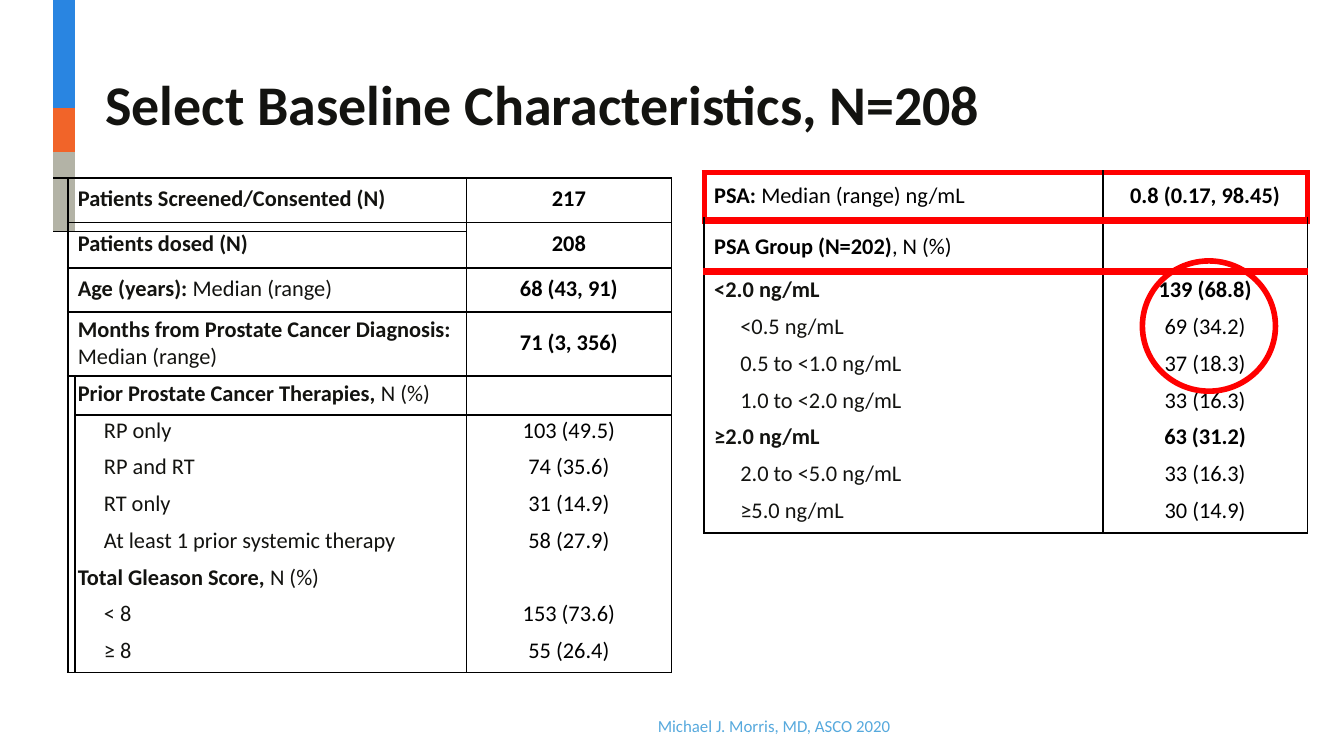
"""Build the baseline characteristics slide with two patient tables."""
from lxml import etree
from pptx import Presentation
from pptx.dml.color import RGBColor
from pptx.enum import shapes, text
from pptx.oxml import ns
from pptx.util import Pt

INK = RGBColor(0x13, 0x13, 0x10)
BLACK = RGBColor(0, 0, 0)
RED = RGBColor(0xFF, 0, 0)
BLUE = RGBColor(0x29, 0x85, 0xE1)
ORANGE = RGBColor(0xF1, 0x64, 0x29)
GREY = RGBColor(0xB3, 0xB3, 0xA6)
CREDIT = RGBColor(0x56, 0xA9, 0xDD)
NO_STYLE = "{2D5ABB26-0587-4C30-8999-92F81FD0307C}"

TITLE = "Select Baseline Characteristics, N=208"
FOOTER = "Michael J. Morris, MD, ASCO 2020"

# Each row: height, top inset, indent, bold label, plain label, value
PATIENT_ROWS = [
    (57.6, 0, 0, "", "", ""),
    (23.8, 0, 0, "", "", ""),
    (14, 0, 0, "", "", ""),
    (23.8, 4.1, 1.4, "Patients Screened/Consented (N)", "", "217"),
    (5, 4.1, 1.4, "", "", "208"),
    (19.4, 0, 5.4, "Patients dosed (N)", "", ""),
    (23.8, 4.1, 5.4, "Age (years): ", "Median (range)", "68 (43, 91)"),
    (34, 1.9, 5.4, "Months from Prostate Cancer Diagnosis:", "\nMedian (range)", "71 (3, 356)"),
    (21.2, 2.3, 1.4, "Prior Prostate Cancer Therapies, ", "N (%)", ""),
    (19.7, 0.9, 15.4, "", "RP only", "103 (49.5)"),
    (19.7, 0.9, 15.4, "", "RP and RT", "74 (35.6)"),
    (19.7, 0.9, 15.4, "", "RT only", "31 (14.9)"),
    (19.7, 0.9, 15.4, "", "At least 1 prior systemic therapy", "58 (27.9)"),
    (19.7, 0.9, 1.4, "Total Gleason Score, ", "N (%)", ""),
    (19.7, 0.9, 15.4, "", "< 8", "153 (73.6)"),
    (19.7, 0.9, 15.4, "", "≥ 8", "55 (26.4)"),
]
PSA_ROWS = [
    (25.6, 5, 5.4, "PSA: ", "Median (range) ng/mL", "0.8 (0.17, 98.45)"),
    (27.2, 6.5, 5.4, "PSA Group (N=202)", ", N (%)", ""),
    (21.4, 2.6, 5.4, "<2.0 ng/mL", "", "139 (68.8)"),
    (19.8, 0.9, 19.4, "", "<0.5 ng/mL", "69 (34.2)"),
    (19.8, 0.9, 19.4, "", "0.5 to <1.0 ng/mL", "37 (18.3)"),
    (19.8, 0.9, 19.4, "", "1.0 to <2.0 ng/mL", "33 (16.3)"),
    (19.8, 0.9, 5.4, "≥2.0 ng/mL", "", "63 (31.2)"),
    (19.8, 0.9, 19.4, "", "2.0 to <5.0 ng/mL", "33 (16.3)"),
    (19.8, 0.9, 19.4, "", "≥5.0 ng/mL", "30 (14.9)"),
]
PATIENT_MERGES = [
    (0, 0, 0, 1), (0, 2, 2, 3), (1, 0, 1, 1), (2, 0, 2, 1), (4, 3, 5, 3),
    (5, 1, 5, 2), (6, 1, 6, 2), (7, 1, 7, 2), (8, 0, 15, 0),
]
PATIENT_FILLS = {
    (0, 0): BLUE, (1, 0): ORANGE, (2, 0): GREY,
    (3, 0): GREY, (3, 1): GREY, (4, 0): GREY, (4, 1): GREY,
}
# Lower case is a thin black edge, upper case a thick red one
PATIENT_EDGES = [
    ["", "", "b", "b"], ["", "", "", ""], ["b", "b", "b", "b"],
    ["r", "ltb", "trb", "lrtb"], ["rb", "ltb", "trb", "lrtb"],
    ["r", "lrb", "lrb", "lrb"], ["r", "lrtb", "lrtb", "lrtb"],
    ["r", "lrtb", "lrtb", "lrtb"], ["r", "lt", "ltrb", "ltrb"],
    *[["lr", "l", "lr", "lr"]] * 6,
    ["lr", "lb", "lrb", "lrb"],
]
PSA_EDGES = [["LTrB", "lTRB"], ["lTrB", "lTrB"], *[["lr", "lr"]] * 6, ["lrb", "lrb"]]


def write(frame, *runs, size=12, color=INK, indent=0, align=text.PP_ALIGN.LEFT, line=None):
    """Fill a text frame with (words, bold) runs; a leading newline opens a paragraph."""
    paragraph = frame.paragraphs[0]
    paragraphs = [paragraph]
    for words, bold in runs:
        if words.startswith("\n"):
            paragraph = frame.add_paragraph()
            paragraphs.append(paragraph)
        if words:
            run = paragraph.add_run()
            run.text = words.strip("\n")
            font = run.font
            font.name, font.size, font.bold = "Calibri", Pt(size), bold
            font.color.rgb = color
    for paragraph in paragraphs:
        paragraph.alignment = align
        if line:
            paragraph.line_spacing = Pt(line)
        properties = paragraph._p.get_or_add_pPr()
        properties.set("marL", str(Pt(indent)))
        properties.set("indent", "0")
        if not paragraph.runs:
            etree.SubElement(paragraph._p, ns.qn("a:endParaRPr"), sz="100")


def draw_edges(cell, edges):
    """Draw the named cell edges and hide the others."""
    properties = cell._tc.get_or_add_tcPr()
    for side in "LRTB":
        edge = etree.SubElement(properties, ns.qn("a:ln" + side))
        if side in edges or side.lower() in edges:
            red = side in edges
            width = (4.25 if side == "B" else 3) if red else 1
            edge.set("w", str(Pt(width)))
            fill = etree.SubElement(edge, ns.qn("a:solidFill"))
            etree.SubElement(fill, ns.qn("a:srgbClr"), val=str(RED if red else BLACK))
        else:
            edge.set("w", "0")
            etree.SubElement(edge, ns.qn("a:noFill"))


def clear_insets(part):
    part.margin_left = part.margin_right = part.margin_top = part.margin_bottom = 0


def add_grid(slide, left, top, widths, rows, edges, merges=(), fills=None, black_rows=0):
    """Add a table whose last column holds the values."""
    height = sum(row[0] for row in rows)
    grid = slide.shapes.add_table(
        len(rows), len(widths), Pt(left), Pt(top), Pt(sum(widths)), Pt(height)).table
    grid.first_row = grid.horz_banding = False
    grid._tbl.tblPr.find(ns.qn("a:tableStyleId")).text = NO_STYLE
    for column, width in zip(grid.columns, widths):
        column.width = Pt(width)
    for r1, c1, r2, c2 in merges:
        grid.cell(r1, c1).merge(grid.cell(r2, c2))
    value_column = len(widths) - 1
    for r, (row_height, inset, indent, strong, plain, value) in enumerate(rows):
        grid.rows[r].height = Pt(row_height)
        label_column = value_column - 1
        if grid.cell(r, label_column).is_spanned and strong:
            label_column -= 1
        for c in range(len(widths)):
            cell = grid.cell(r, c)
            clear_insets(cell)
            draw_edges(cell, edges[r][c])
            fill = (fills or {}).get((r, c))
            if fill:
                cell.fill.solid()
                cell.fill.fore_color.rgb = fill
            else:
                cell.fill.background()
            if c == value_column:
                centred = 9.2 if "\n" in plain else inset
                cell.margin_top = Pt(centred)
                write(cell.text_frame, (value, indent < 10), color=BLACK,
                      align=text.PP_ALIGN.CENTER)
            elif c == label_column:
                cell.margin_top = Pt(inset if strong or plain else 0)
                write(cell.text_frame, (strong, True), (plain, False), indent=indent,
                      color=BLACK if r < black_rows else INK,
                      line=None if inset else 13.6)
            else:
                write(cell.text_frame)


def main():
    deck = Presentation()
    deck.slide_width, deck.slide_height = Pt(720), Pt(405)
    slide = deck.slides.add_slide(deck.slide_layouts[5])

    title = slide.shapes.title
    title.left, title.top, title.width, title.height = Pt(55.4), Pt(36), Pt(471), Pt(38)
    footer = slide.shapes.add_textbox(Pt(351.4), Pt(384.5), Pt(127), Pt(11))
    for box in (title, footer):
        clear_insets(box.text_frame)
        box.text_frame.word_wrap = True
        box.text_frame.vertical_anchor = text.MSO_ANCHOR.TOP
        box.text_frame.auto_size = text.MSO_AUTO_SIZE.SHAPE_TO_FIT_TEXT
    title.text_frame.margin_top = Pt(1)
    write(title.text_frame, (TITLE, True), size=30, indent=1)
    write(footer.text_frame, (FOOTER, False), size=9, color=CREDIT, indent=1, line=9.6)

    add_grid(slide, 28.4, 0, [7.9, 4, 209.6, 109.8], PATIENT_ROWS, PATIENT_EDGES,
             PATIENT_MERGES, PATIENT_FILLS)
    add_grid(slide, 377.2, 92.6, [213.6, 109.6], PSA_ROWS, PSA_EDGES, black_rows=2)

    highlight = slide.shapes.add_shape(
        shapes.MSO_SHAPE.OVAL, Pt(612), Pt(139.8), Pt(71.3), Pt(69.8))
    highlight.shadow.inherit = False
    highlight.fill.background()
    highlight.line.color.rgb = RED
    highlight.line.width = Pt(3)
    deck.save("out.pptx")


if __name__ == "__main__":
    main()
